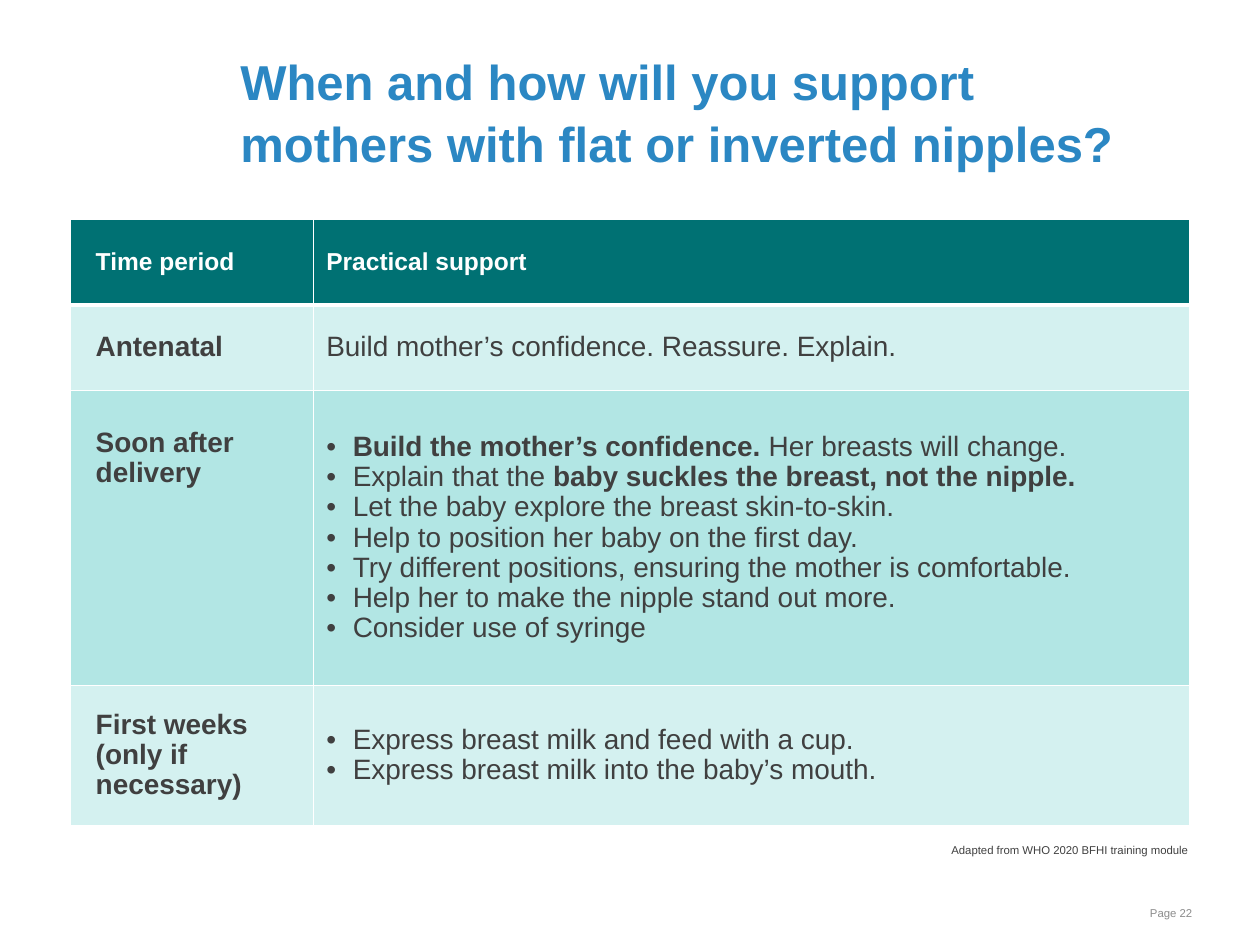
from lxml.etree import SubElement
from pptx import Presentation
from pptx.dml.color import RGBColor
from pptx.enum.text import MSO_ANCHOR as Anchor, PP_ALIGN as Align
from pptx.oxml.ns import qn
from pptx.util import Inches, Pt

BLUE = RGBColor(0x2B, 0x87, 0xC3)
GREY = RGBColor(0x8C, 0x8C, 0x8C)
DARK = RGBColor(0x40, 0x40, 0x40)
WHITE = RGBColor(0xFF, 0xFF, 0xFF)
TEAL = RGBColor(0x00, 0x71, 0x73)
PALE = RGBColor(0xD4, 0xF1, 0xF0)
MINT = RGBColor(0xB2, 0xE6, 0xE4)

deck = Presentation()
deck.slide_width, deck.slide_height = Inches(10), Inches(7.5)
page = deck.slides.add_slide(deck.slide_layouts[6])

# The page is a grid of 100 columns and 75 rows.
COL = deck.slide_width // 100
ROW = deck.slide_height // 75


def write(frame, lines, size, color, bold=False, align=Align.LEFT, spacing=1.0, bullet=False):
    """Fill a text frame, one paragraph a line; ** switches bold, \\n breaks the line."""
    frame.word_wrap = True
    for index, line in enumerate(lines):
        para = frame.add_paragraph() if index else frame.paragraphs[0]
        para.alignment, para.line_spacing = align, spacing
        if bullet:
            props = para._p.get_or_add_pPr()
            props.set("marL", str(int(2.1 * COL)))
            props.set("indent", str(int(-2.1 * COL)))
            SubElement(props, qn("a:buFont"), typeface="Arial")
            SubElement(props, qn("a:buChar"), char="•")
        for part, piece in enumerate(line.split("**")):
            for row, words in enumerate(piece.split("\n")):
                if row:
                    para.add_line_break()
                if words:
                    span = para.add_run()
                    span.text = words
                    span.font.name, span.font.size = "Arial", Pt(size)
                    span.font.color.rgb = color
                    span.font.bold = bold or part % 2 == 1


def set_borders(cell, bottom):
    """Draw white cell borders, 1 pt wide except for the bottom one."""
    props = cell._tc.get_or_add_tcPr()
    widths = {"a:lnL": 1, "a:lnR": 1, "a:lnT": 1, "a:lnB": bottom}
    for index, (side, width) in enumerate(widths.items()):
        line = SubElement(props, qn(side), w=str(Pt(width)))
        SubElement(SubElement(line, qn("a:solidFill")), qn("a:srgbClr"), val=str(WHITE))
        props.insert(index, line)


# Title, source and page number
texts = [
    ("When and how will you support mothers with flat or inverted nipples?",
     (18.1, 3.1, 76, 11.3), Anchor.MIDDLE,
     dict(size=28, color=BLUE, bold=True, spacing=1.05)),
    ("Adapted from WHO 2020 BFHI training module",
     (68, 66.4, 27.3, 2.1), Anchor.TOP,
     dict(size=6.5, color=DARK, align=Align.RIGHT)),
    ("Page 22", (71.7, 71.1, 23.9, 2.4), Anchor.BOTTOM,
     dict(size=6.5, color=GREY, align=Align.RIGHT)),
]
for text, (left, top, width, height), anchor, style in texts:
    box = page.shapes.add_textbox(int(left * COL), int(top * ROW), int(width * COL), int(height * ROW))
    box.text_frame.vertical_anchor = anchor
    write(box.text_frame, [text], **style)

# Support table: row height, fill, period, support
rows = [
    (6.8, TEAL, "Time period", ["Practical support"]),
    (6.8, PALE, "Antenatal", ["Build mother’s confidence. Reassure. Explain."]),
    (23.4, MINT, "Soon after delivery", [
        "**Build the mother’s confidence.** Her breasts will change.",
        "Explain that the **baby suckles the breast, not the nipple.**",
        "Let the baby explore the breast skin-to-skin.",
        "Help to position her baby on the first day.",
        "Try different positions, ensuring the mother is comfortable.",
        "Help her to make the nipple stand out more.",
        "Consider use of syringe",
    ]),
    (11.1, PALE, "First weeks\n(only if necessary)", [
        "Express breast milk and feed with a cup.",
        "Express breast milk into the baby’s mouth.",
    ]),
]
widths = (19.3, 69.5)
table = page.shapes.add_table(len(rows), len(widths), int(5.6 * COL), int(17.4 * ROW),
                              int(sum(widths) * COL), int(sum(row[0] for row in rows) * ROW)).table
for column, width in zip(table.columns, widths):
    column.width = int(width * COL)

for index, (height, fill, period, support) in enumerate(rows):
    table.rows[index].height = int(height * ROW)
    header = index == 0
    for column, lines in enumerate(([period], support)):
        cell = table.cell(index, column)
        cell.fill.solid()
        cell.fill.fore_color.rgb = fill
        set_borders(cell, bottom=3 if header else 1)
        cell.vertical_anchor = Anchor.MIDDLE
        cell.margin_left = (1 if column else 2) * COL
        write(cell.text_frame, lines, size=14 if header else 16, color=WHITE if header else DARK,
              bold=header or column == 0, spacing=0.97, bullet=len(lines) > 1)

# The period of the tall row lines up with its first bullet.
delivery = table.cell(2, 0)
delivery.vertical_anchor = Anchor.TOP
delivery.margin_top = 3 * ROW

deck.save("out.pptx")
